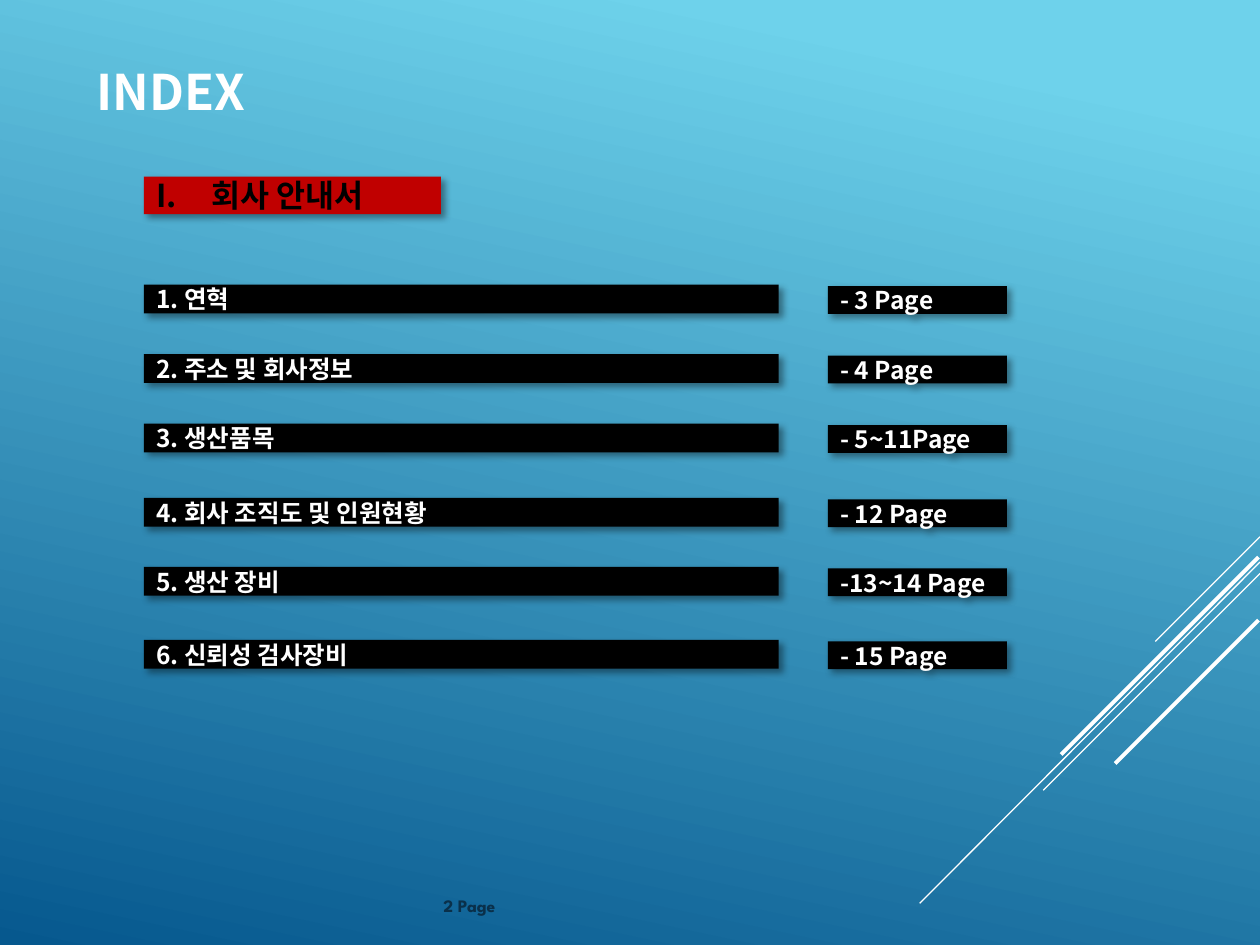
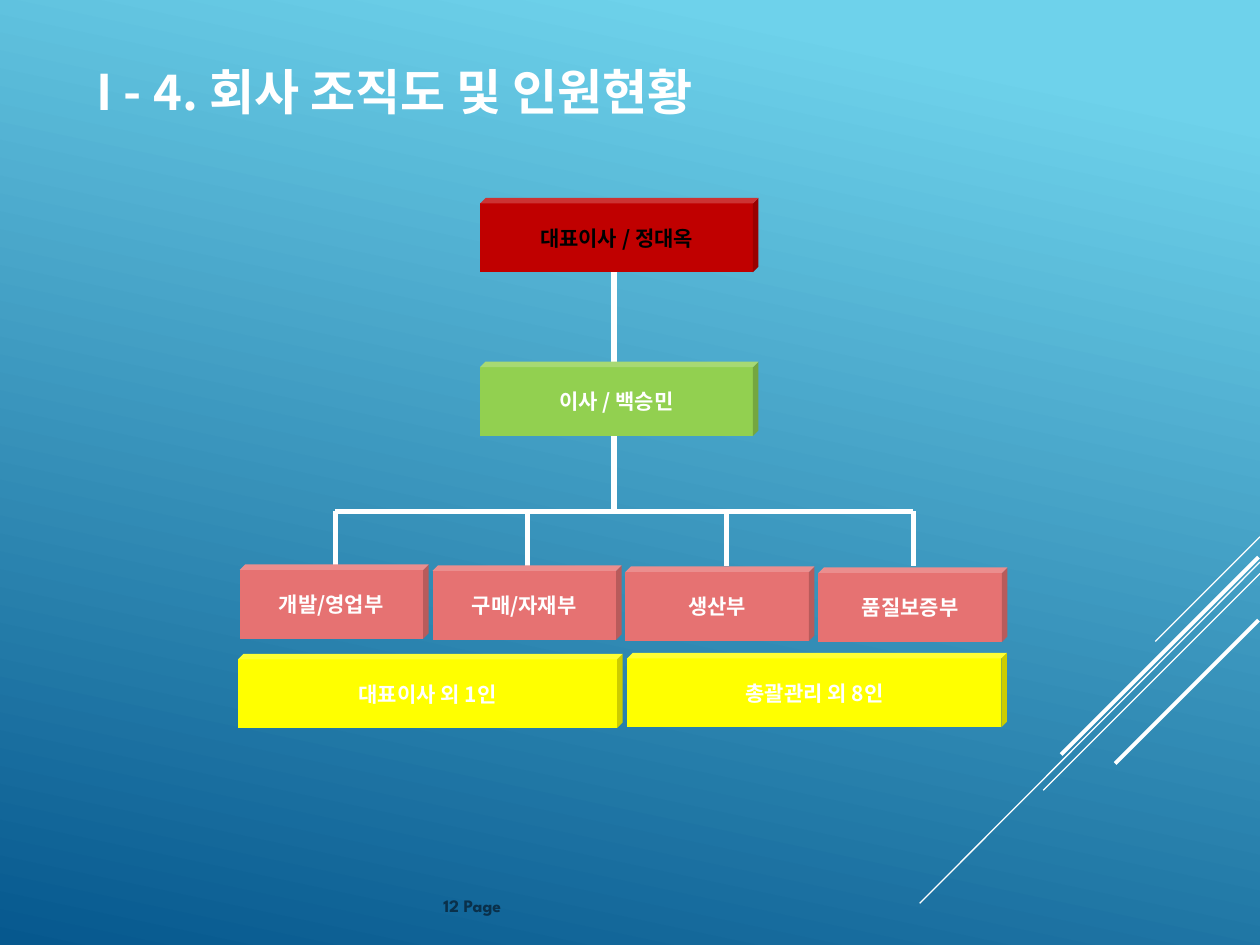
"""Builds the index slide and the organisation chart slide of a company profile."""
from dataclasses import dataclass

from lxml import etree
from pptx import Presentation
from pptx.dml.color import RGBColor
from pptx.enum.shapes import MSO_CONNECTOR, MSO_SHAPE
from pptx.enum.text import MSO_ANCHOR, PP_ALIGN
from pptx.oxml.ns import qn
from pptx.shapes.autoshape import Shape
from pptx.slide import Slide
from pptx.text.text import TextFrame
from pptx.util import Cm, Pt

STRAIGHT = MSO_CONNECTOR.STRAIGHT
RECTANGLE, CUBE = MSO_SHAPE.RECTANGLE, MSO_SHAPE.CUBE
MIDDLE = MSO_ANCHOR.MIDDLE
LEFT, CENTER = PP_ALIGN.LEFT, PP_ALIGN.CENTER

WHITE = RGBColor(0xFF, 0xFF, 0xFF)
BLACK = RGBColor(0x00, 0x00, 0x00)
RED = RGBColor(0xC0, 0x00, 0x00)
GREEN = RGBColor(0x92, 0xD0, 0x50)
PINK = RGBColor(0xE6, 0x72, 0x72)
YELLOW = RGBColor(0xFF, 0xFF, 0x00)
NAVY = RGBColor(0x0A, 0x30, 0x4A)
SKY = RGBColor(0x6E, 0xD2, 0xEB)
OCEAN = RGBColor(0x06, 0x58, 0x8E)

BODY_FONT = "Noto Sans CJK KR"
FOOTER_FONT = "League Spartan"


@dataclass(frozen=True)
class Line:
    """A straight white line, in centimetres and points."""
    x1: float
    y1: float
    x2: float
    y2: float
    width: float = 3


@dataclass(frozen=True)
class Box:
    """A filled box with one line of text, in centimetres."""
    text: str
    left: float
    top: float
    width: float
    height: float
    fill: RGBColor = BLACK
    color: RGBColor = WHITE


@dataclass(frozen=True)
class IndexEntry:
    """A chapter with its pages and the top of its row."""
    title: str
    pages: str
    top: float


STRIPES = (
    Line(25.4, 10.82, 23.29, 12.93, 0.75),
    Line(25.4, 11.33, 18.54, 18.21, 0.75),
    Line(25.4, 11.56, 21.03, 15.93, 0.75),
    Line(25.37, 11.23, 21.39, 15.21, 2.25),
    Line(25.37, 12.5, 22.48, 15.39, 2.25),
)

INDEX_HEADING = Box("회사 안내서", 2.9, 3.56, 5.99, 0.76, RED, BLACK)
INDEX_ENTRIES = (
    IndexEntry("1. 연혁", "- 3 Page", 5.74),
    IndexEntry("2. 주소 및 회사정보", "- 4 Page", 7.14),
    IndexEntry("3. 생산품목", "- 5~11Page", 8.54),
    IndexEntry("4. 회사 조직도 및 인원현황", "- 12 Page", 10.04),
    IndexEntry("5. 생산 장비", "-13~14 Page", 11.43),
    IndexEntry("6. 신뢰성 검사장비", "- 15 Page", 12.9),
)

TRUNK_X, BUS_Y = 12.38, 10.31
BRANCHES_X = (6.76, 10.64, 14.64, 18.41)
ORGANISATION_LINES = (
    Line(TRUNK_X, 4.7, TRUNK_X, 7.32),
    Line(TRUNK_X, 8.41, TRUNK_X, BUS_Y),
    Line(BRANCHES_X[0], BUS_Y, BRANCHES_X[-1], BUS_Y),
    *(Line(x, BUS_Y, x, 11.4) for x in BRANCHES_X),
)
DEPARTMENTS = ("개발/영업부", "구매/자재부", "생산부", "품질보증부")
CUBE_HEIGHT = 1.5
ORGANISATION_BOXES = (
    Box("대표이사 / 정대옥", 9.68, 3.99, 5.61, CUBE_HEIGHT, RED, BLACK),
    Box("이사 / 백승민", 9.68, 7.29, 5.61, CUBE_HEIGHT, GREEN),
    *(Box(name, 4.83 + 3.89 * index, 11.38 + 0.02 * index, 3.81, CUBE_HEIGHT, PINK)
      for index, name in enumerate(DEPARTMENTS)),
    Box("대표이사 외 1인", 4.8, 13.18, 7.75, CUBE_HEIGHT, YELLOW),
    Box("총괄관리 외 8인", 12.65, 13.16, 7.65, CUBE_HEIGHT, YELLOW),
)


def write(frame: TextFrame, text: str, size: float, color: RGBColor,
          align: PP_ALIGN = LEFT, font_name: str = BODY_FONT,
          numbering: str = "") -> None:
    """Write one bold paragraph, numbered if a scheme is given."""
    frame.word_wrap = True
    paragraph = frame.paragraphs[0]
    paragraph.text = text
    paragraph.alignment = align
    properties = paragraph._p.get_or_add_pPr()
    if numbering:
        indent = Cm(1.11)
        properties.set("marL", str(indent))
        properties.set("indent", str(-indent))
        etree.SubElement(properties, qn("a:buFont"), typeface="+mj-lt")
        etree.SubElement(properties, qn("a:buAutoNum"), type=numbering)
    font = paragraph.font
    font.size, font.bold, font.name = Pt(size), True, font_name
    font.color.rgb = color
    etree.SubElement(properties.find(qn("a:defRPr")), qn("a:ea"), typeface=font_name)


def add_lines(slide: Slide, lines: tuple[Line, ...]) -> None:
    """Draw white lines as one group."""
    group = slide.shapes.add_group_shape()
    for line in lines:
        connector = group.shapes.add_connector(
            STRAIGHT, Cm(line.x1), Cm(line.y1), Cm(line.x2), Cm(line.y2))
        connector.line.color.rgb = WHITE
        connector.line.width = Pt(line.width)
        etree.SubElement(connector._element.spPr, qn("a:effectLst"))


def add_box(slide: Slide, box: Box, preset: MSO_SHAPE) -> Shape:
    """Draw a borderless box without text."""
    shape = slide.shapes.add_shape(
        preset, Cm(box.left), Cm(box.top), Cm(box.width), Cm(box.height))
    shape.shadow.inherit = False
    shape.fill.solid()
    shape.fill.fore_color.rgb = box.fill
    shape.line.fill.background()
    shape.text_frame.vertical_anchor = MIDDLE
    return shape


def add_bar(slide: Slide, box: Box, size: float, numbering: str = "") -> None:
    """Draw a bar with left-aligned text and a soft shadow."""
    shape = add_box(slide, box, RECTANGLE)
    effects = shape._element.spPr.find(qn("a:effectLst"))
    shadow = etree.SubElement(
        effects, qn("a:outerShdw"), blurRad=str(Pt(4)), dist=str(Pt(3)),
        dir=str(45 * 60000), algn="tl", rotWithShape="0")
    shadow_color = etree.SubElement(shadow, qn("a:srgbClr"), val=str(BLACK))
    etree.SubElement(shadow_color, qn("a:alpha"), val="40000")
    write(shape.text_frame, box.text, size, box.color, numbering=numbering)


def add_cube(slide: Slide, box: Box) -> None:
    """Draw a shallow cube with centred text."""
    shape = add_box(slide, box, CUBE)
    shape.adjustments[0] = 0.074
    write(shape.text_frame, box.text, 12, box.color, CENTER)


def add_slide(presentation: Presentation, title: str, page: int) -> Slide:
    """Add a slide with the shared background, stripes, title and footer."""
    slide = presentation.slides.add_slide(presentation.slide_layouts[6])
    fill = slide.background.fill
    fill.gradient()
    fill.gradient_angle = 258
    for stop, position, color in zip(fill.gradient_stops, (0.1, 1), (SKY, OCEAN)):
        stop.position = position
        stop.color.rgb = color
    add_lines(slide, STRIPES)
    title_box = slide.shapes.add_textbox(Cm(1.7), Cm(1.12), Cm(17.6), Cm(1.45))
    write(title_box.text_frame, title, 28, WHITE)
    footer = slide.shapes.add_textbox(Cm(8.69), Cm(17.91), Cm(8.05), Cm(1.02))
    write(footer.text_frame, f"{page} Page", 10, NAVY, font_name=FOOTER_FONT)
    return slide


def build_index(presentation: Presentation) -> None:
    """Build the table of contents."""
    slide = add_slide(presentation, "INDEX", 2)
    add_bar(slide, INDEX_HEADING, 18, "romanUcPeriod")
    for entry in INDEX_ENTRIES:
        add_bar(slide, Box(entry.title, 2.9, entry.top, 12.8, 0.58), 14)
        add_bar(slide, Box(entry.pages, 16.69, entry.top + 0.03, 3.61, 0.56), 14)


def build_organisation(presentation: Presentation) -> None:
    """Build the organisation chart."""
    slide = add_slide(presentation, "I - 4. 회사 조직도 및 인원현황", 12)
    add_lines(slide, ORGANISATION_LINES)
    for box in ORGANISATION_BOXES:
        add_cube(slide, box)


def main() -> None:
    """Build and save the presentation."""
    presentation = Presentation()
    presentation.slide_width, presentation.slide_height = Cm(25.4), Cm(19.05)
    build_index(presentation)
    build_organisation(presentation)
    presentation.save("out.pptx")


if __name__ == "__main__":
    main()
